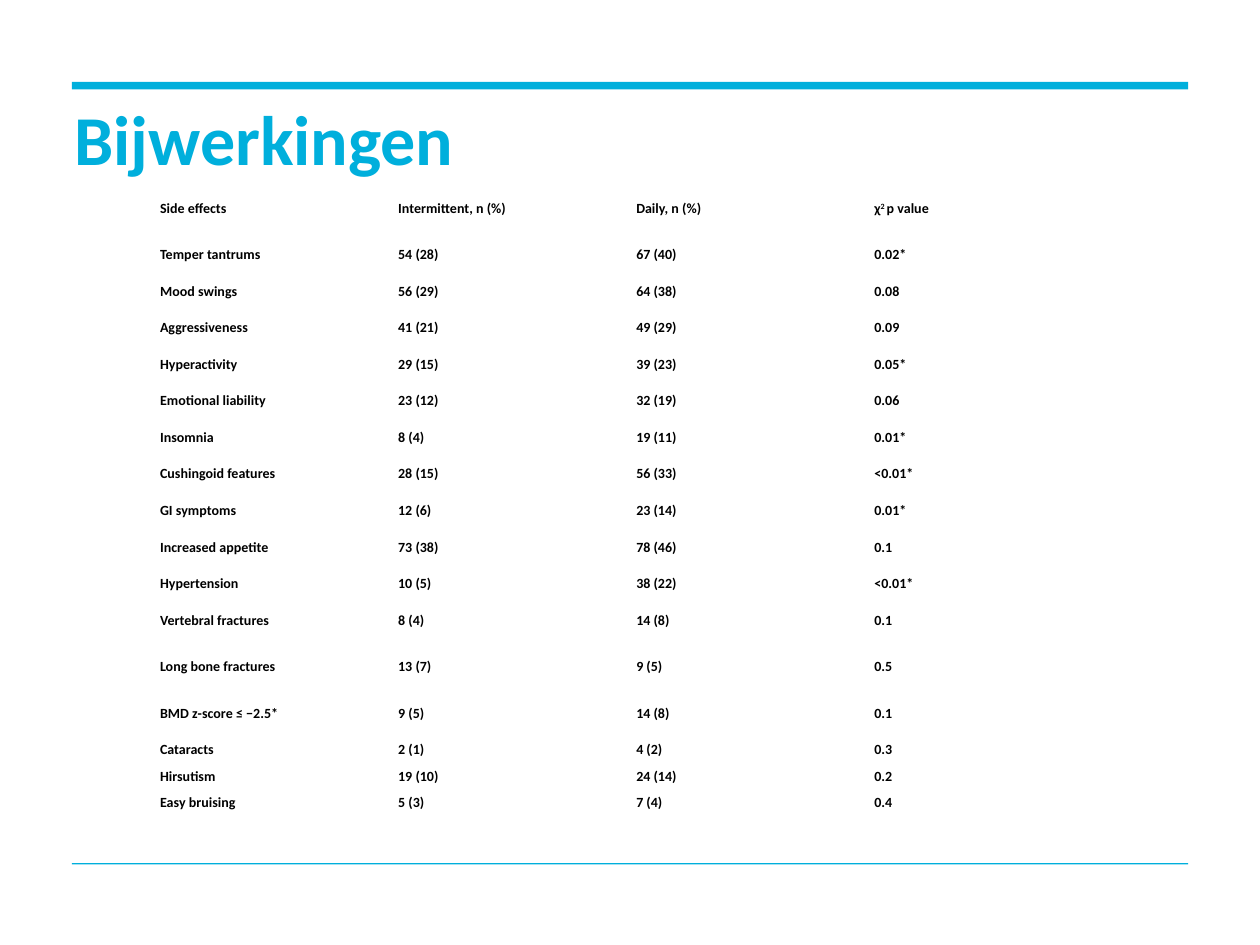
from pptx import Presentation
from pptx.dml.color import RGBColor
from pptx.enum.shapes import MSO_SHAPE
from pptx.enum.text import MSO_ANCHOR
from pptx.util import Inches, Pt

RECTANGLE = MSO_SHAPE.RECTANGLE
MIDDLE = MSO_ANCHOR.MIDDLE
CYAN = RGBColor(0x00, 0xAF, 0xDC)
BLACK = RGBColor(0x00, 0x00, 0x00)

TITLE_FORMAT = {"name": "Calibri", "size": Pt(40), "bold": True}
CELL_FORMAT = {"name": "Calibri", "size": Pt(8), "bold": True}
TITLE_FRAME = {
    "margin_left": 0, "margin_right": 0, "margin_top": 0, "margin_bottom": 0,
    "vertical_anchor": MIDDLE, "word_wrap": True,
}
CELL_FRAME = {
    "margin_left": Inches(0.05), "margin_right": Inches(0.05),
    "margin_top": Inches(0.02), "margin_bottom": Inches(0.02),
    "vertical_anchor": MIDDLE,
}

TALL, SHORT = 0.37, 0.21
COLUMN_WIDTH = 1.89
SUPERSCRIPT = "2 "
SIDE_EFFECTS = [
    (TALL, "Side effects", "Intermittent, n (%)", "Daily, n (%)", ("χ", SUPERSCRIPT, "p value")),
    (TALL, "Temper tantrums", "54 (28)", "67 (40)", "0.02*"),
    (SHORT, "Mood swings", "56 (29)", "64 (38)", "0.08"),
    (TALL, "Aggressiveness", "41 (21)", "49 (29)", "0.09"),
    (SHORT, "Hyperactivity", "29 (15)", "39 (23)", "0.05*"),
    (TALL, "Emotional liability", "23 (12)", "32 (19)", "0.06"),
    (SHORT, "Insomnia", "8 (4)", "19 (11)", "0.01*"),
    (TALL, "Cushingoid features", "28 (15)", "56 (33)", "<0.01*"),
    (SHORT, "GI symptoms", "12 (6)", "23 (14)", "0.01*"),
    (TALL, "Increased appetite", "73 (38)", "78 (46)", "0.1"),
    (SHORT, "Hypertension", "10 (5)", "38 (22)", "<0.01*"),
    (TALL, "Vertebral fractures", "8 (4)", "14 (8)", "0.1"),
    (TALL, "Long bone fractures", "13 (7)", "9 (5)", "0.5"),
    (TALL, "BMD z-score ≤ −2.5*", "9 (5)", "14 (8)", "0.1"),
    (SHORT, "Cataracts", "2 (1)", "4 (2)", "0.3"),
    (SHORT, "Hirsutism", "19 (10)", "24 (14)", "0.2"),
    (SHORT, "Easy bruising", "5 (3)", "7 (4)", "0.4"),
]


def apply_format(target, values):
    for name, value in values.items():
        setattr(target, name, value)


def add_run(paragraph, text, values, color):
    run = paragraph.add_run()
    run.text = text
    apply_format(run.font, values)
    run.font.color.rgb = color
    return run


def add_rule(slide, top, height):
    rule = slide.shapes.add_shape(
        RECTANGLE, Inches(0.57), Inches(top), Inches(8.86), Inches(height))
    rule.shadow.inherit = False
    rule.fill.solid()
    rule.fill.fore_color.rgb = CYAN
    rule.line.fill.background()


def add_title(slide, text):
    box = slide.shapes.add_textbox(
        Inches(0.59), Inches(0.84), Inches(8.86), Inches(0.58))
    apply_format(box.text_frame, TITLE_FRAME)
    paragraph = box.text_frame.paragraphs[0]
    paragraph.line_spacing = Pt(42)
    add_run(paragraph, text, TITLE_FORMAT, CYAN)


def fill_cell(cell, content):
    apply_format(cell, CELL_FRAME)
    cell.fill.background()
    parts = (content,) if isinstance(content, str) else content
    for part in parts:
        run = add_run(cell.text_frame.paragraphs[0], part, CELL_FORMAT, BLACK)
        if part == SUPERSCRIPT:
            run.font._element.set("baseline", "30000")


def add_side_effects_table(slide):
    column_count = len(SIDE_EFFECTS[0]) - 1
    total_height = sum(row[0] for row in SIDE_EFFECTS)
    table = slide.shapes.add_table(
        len(SIDE_EFFECTS), column_count, Inches(1.22), Inches(1.47),
        Inches(COLUMN_WIDTH * column_count), Inches(total_height)).table
    apply_format(table, {"first_row": False, "horz_banding": False})
    for column in table.columns:
        column.width = Inches(COLUMN_WIDTH)
    for row, (height, *contents) in zip(table.rows, SIDE_EFFECTS):
        row.height = Inches(height)
        for cell, content in zip(row.cells, contents):
            fill_cell(cell, content)


def main():
    presentation = Presentation()
    presentation.slide_width = Inches(10)
    presentation.slide_height = Inches(7.5)
    slide = presentation.slides.add_slide(presentation.slide_layouts[6])
    add_rule(slide, 0.65, 0.06)
    add_rule(slide, 6.85, 0.01)
    add_title(slide, "Bijwerkingen")
    add_side_effects_table(slide)
    presentation.save("out.pptx")


if __name__ == "__main__":
    main()
